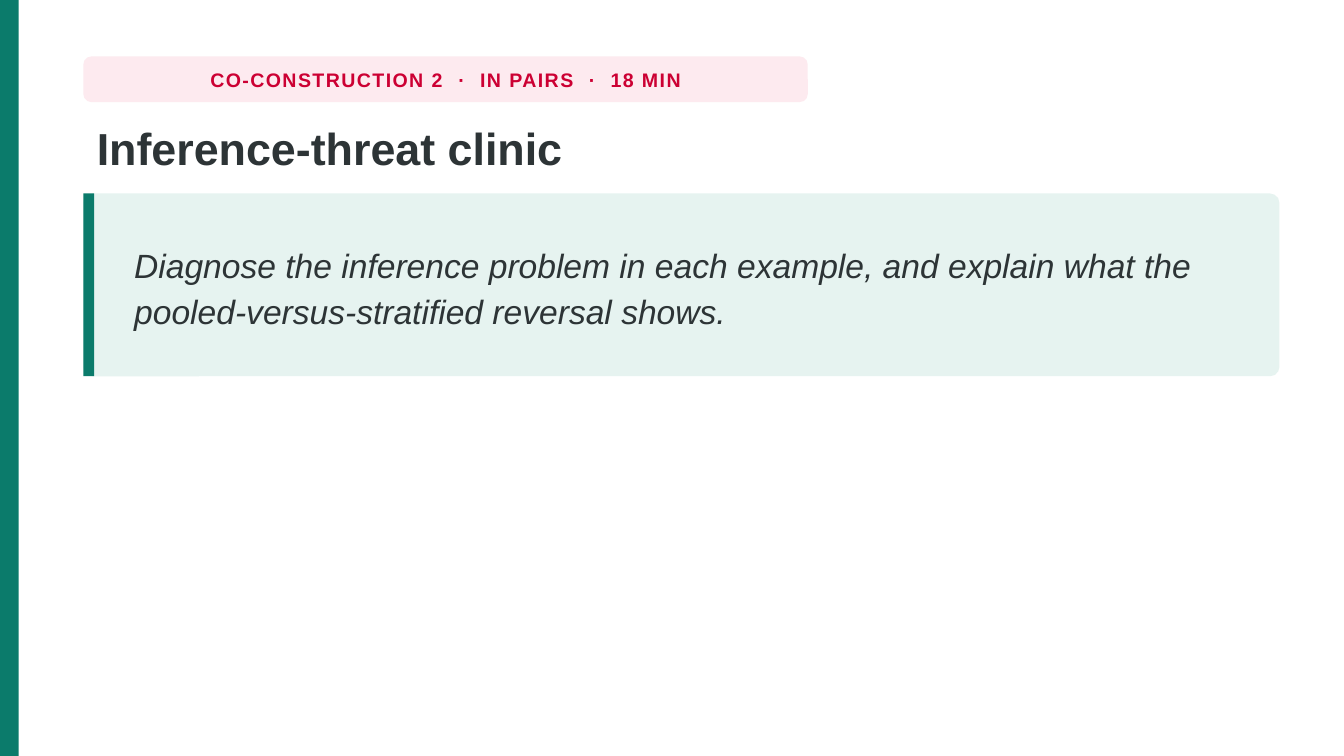
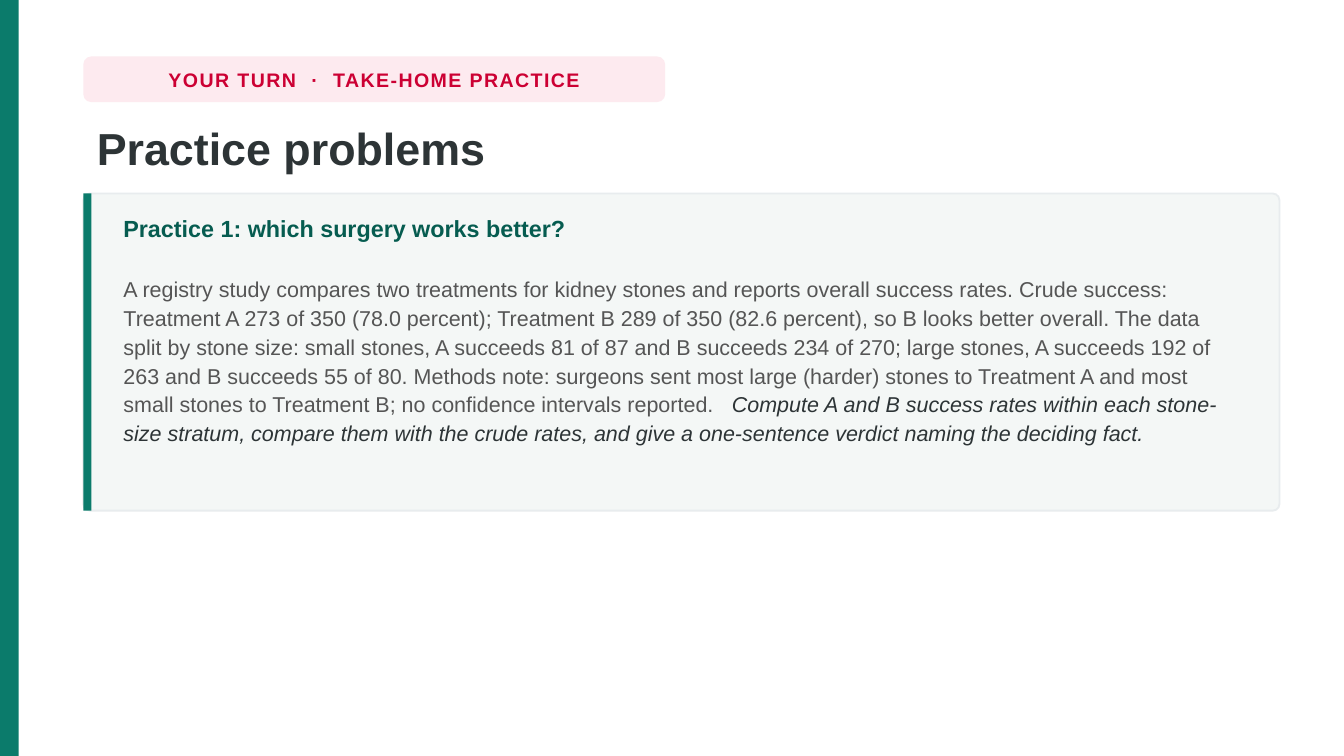
from pptx import Presentation
from pptx import util as u
from pptx.dml.color import RGBColor
from pptx.enum import shapes, text

FONT = "Arial"
GREEN, DARK_GREEN, MINT = "0B7B6B", "065C50", "E6F3F0"
RED, PINK = "CC0033", "FDEAEF"
INK, GREY, PALE, EDGE = "2D3436", "555555", "F4F7F6", "E8ECEE"

WIDTH, HEIGHT = 720, 405
LEFT, CONTENT_WIDTH = 44.64, 640.8
CARD_TOP = 103.68


def color(value):
    return RGBColor.from_string(value)


def place(shape, left, top, width, height):
    shape.left, shape.top = u.Pt(left), u.Pt(top)
    shape.width, shape.height = u.Pt(width), u.Pt(height)


def add_panel(page, left, top, width, height, fill, radius=0, line=None):
    """Add a rectangle, rounded when a corner radius is given."""
    kind = shapes.MSO_SHAPE.ROUNDED_RECTANGLE if radius else shapes.MSO_SHAPE.RECTANGLE
    panel = page.shapes.add_shape(kind, u.Pt(left), u.Pt(top), u.Pt(width), u.Pt(height))
    if radius:
        panel.adjustments[0] = radius / min(width, height)
    panel.shadow.inherit = False
    panel.fill.solid()
    panel.fill.fore_color.rgb = color(fill)
    if line:
        panel.line.color.rgb = color(line)
        panel.line.width = u.Pt(1)
    else:
        panel.line.fill.background()
    return panel


def add_span(para, words, size, ink, bold=False, italic=False, spacing=0):
    """Add a formatted run; spacing is the letter spacing in points."""
    span = para.add_run()
    span.text = words
    font = span.font
    font.name, font.size = FONT, u.Pt(size)
    font.bold, font.italic = bold, italic
    font.color.rgb = color(ink)
    if spacing:
        span._r.get_or_add_rPr().set("spc", str(round(spacing * 100)))


def add_text_box(page, left, top, width, height, anchor):
    box = page.shapes.add_textbox(u.Pt(left), u.Pt(top), u.Pt(width), u.Pt(height))
    box.text_frame.word_wrap = True
    box.text_frame.vertical_anchor = anchor
    return box.text_frame


def add_tag(page, parts, width):
    """Add the pink label whose parts are set apart by spaced dots."""
    tag = add_panel(page, LEFT, 30.24, width, 24.48, PINK, radius=4.32)
    frame = tag.text_frame
    frame.word_wrap = False
    frame.vertical_anchor = text.MSO_ANCHOR.MIDDLE
    para = frame.paragraphs[0]
    para.alignment = text.PP_ALIGN.CENTER
    for index, part in enumerate(parts):
        if index:
            for mark, spacing in ((" ", 4.5), ("·", 0.8), (" ", 4.5)):
                add_span(para, mark, 10.5, RED, bold=True, spacing=spacing)
        add_span(para, part, 10.5, RED, bold=True, spacing=0.8)


def set_title(page, words):
    title = page.shapes.title
    place(title, LEFT, 60.48, CONTENT_WIDTH, 40.32)
    frame = title.text_frame
    frame.word_wrap = True
    frame.auto_size = text.MSO_AUTO_SIZE.NONE
    frame.vertical_anchor = text.MSO_ANCHOR.TOP
    para = frame.paragraphs[0]
    para.alignment = text.PP_ALIGN.LEFT
    para.line_spacing = 1.02
    add_span(para, words, 24, INK, bold=True)


def add_page(deck, tag_parts, tag_width, title):
    page = deck.slides.add_slide(deck.slide_layouts[5])
    add_panel(page, 0, 0, 10.08, HEIGHT, GREEN)
    add_tag(page, tag_parts, tag_width)
    set_title(page, title)
    return page


def add_card(page, height, fill, radius, accent_width, line=None):
    """Add a rounded card with a green accent along its left side."""
    add_panel(page, LEFT, CARD_TOP, CONTENT_WIDTH, height, fill, radius, line)
    add_panel(page, LEFT, CARD_TOP, accent_width, height, GREEN)


def add_quote(page, words):
    add_card(page, 97.92, MINT, 5, 5.76)
    frame = add_text_box(page, 64.8, 107.28, 601.2, 90.72, text.MSO_ANCHOR.MIDDLE)
    para = frame.paragraphs[0]
    para.line_spacing = 1.16
    add_span(para, words, 18, INK, italic=True)


def add_problem(page, heading, story, task):
    add_card(page, 169.92, PALE, 3.6, 4.32, EDGE)
    frame = add_text_box(page, 59.04, 109.44, 610.56, 158.4, text.MSO_ANCHOR.TOP)
    para = frame.paragraphs[0]
    para.line_spacing = 1.12
    para.space_after = u.Pt(16.5)
    add_span(para, heading, 12.5, DARK_GREEN, bold=True)
    para = frame.add_paragraph()
    para.line_spacing = 1.12
    add_span(para, story, 11.5, GREY)
    add_span(para, " ", 11.5, GREY, spacing=6.4)
    add_span(para, task, 11.5, INK, italic=True)


def main():
    deck = Presentation()
    deck.slide_width, deck.slide_height = u.Pt(WIDTH), u.Pt(HEIGHT)

    page = add_page(deck, ["CO-CONSTRUCTION 2", "IN PAIRS", "18 MIN"], 388.08,
                    "Inference-threat clinic")
    add_quote(page, "Diagnose the inference problem in each example, and explain "
                    "what the pooled-versus-stratified reversal shows.")

    page = add_page(deck, ["YOUR TURN", "TAKE-HOME PRACTICE"], 311.76,
                    "Practice problems")
    add_problem(
        page,
        "Practice 1: which surgery works better?",
        "A registry study compares two treatments for kidney stones and reports "
        "overall success rates. Crude success: Treatment A 273 of 350 (78.0 percent); "
        "Treatment B 289 of 350 (82.6 percent), so B looks better overall. The data "
        "split by stone size: small stones, A succeeds 81 of 87 and B succeeds 234 of "
        "270; large stones, A succeeds 192 of 263 and B succeeds 55 of 80. Methods "
        "note: surgeons sent most large (harder) stones to Treatment A and most small "
        "stones to Treatment B; no confidence intervals reported.",
        "Compute A and B success rates within each stone-size stratum, compare them "
        "with the crude rates, and give a one-sentence verdict naming the deciding fact.")

    deck.save("out.pptx")


if __name__ == "__main__":
    main()
